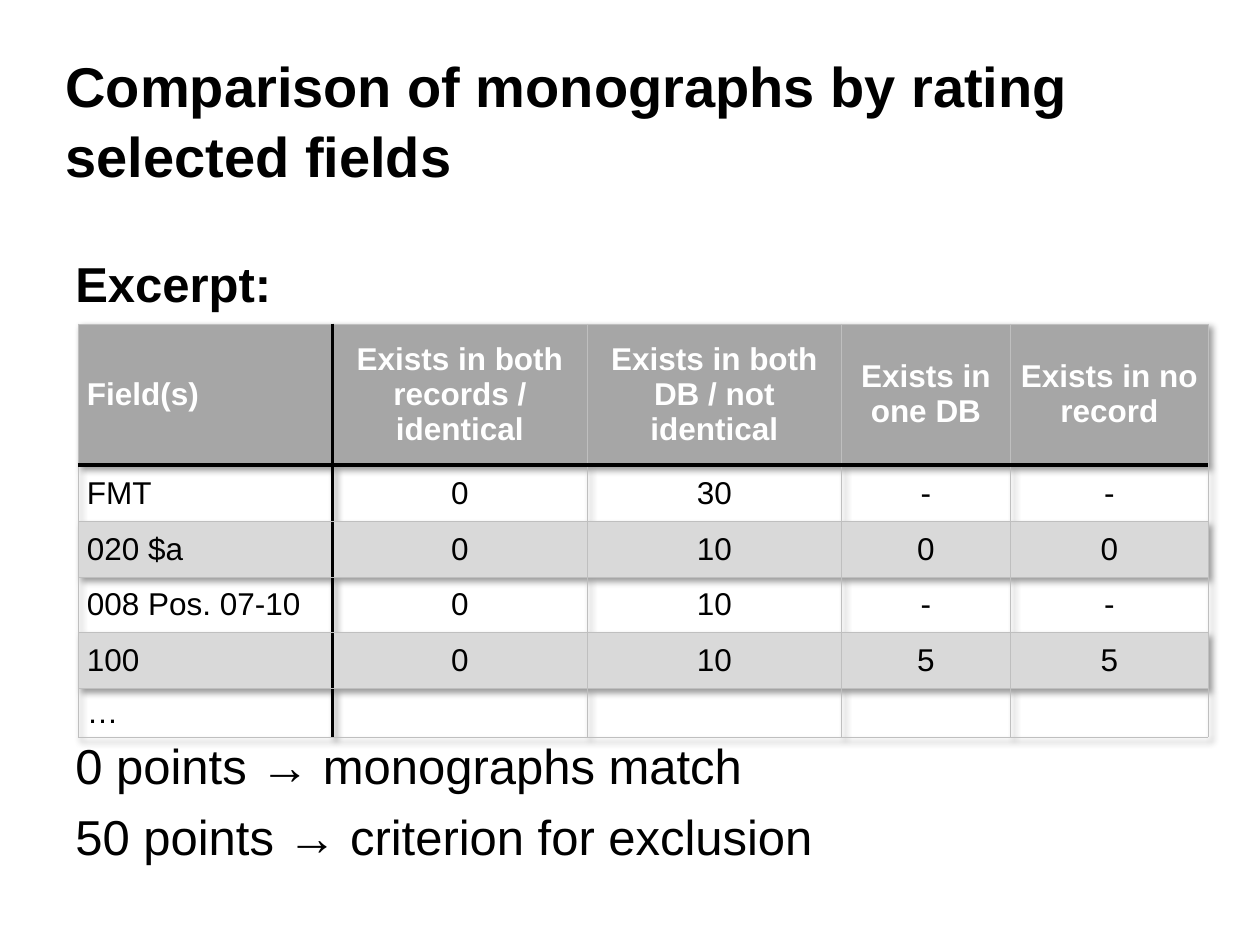
from dataclasses import dataclass

from lxml import etree
from pptx import Presentation, util as u
from pptx.dml.color import RGBColor
from pptx.enum import text
from pptx.oxml import parse_xml
from pptx.oxml.ns import nsdecls, qn

COLORS = {"black": "000000", "white": "FFFFFF", "header": "A6A6A6",
          "band": "D9D9D9", "rule": "BFBFBF"}
WIDTH, HEIGHT = 10, 7.5
COLUMN_WIDTHS = [2.02, 2.02, 2.02, 1.34, 1.57]
ROW_HEIGHTS = [1.12, 0.45, 0.44, 0.44, 0.44, 0.39]
ROWS = [
    ["Field(s)", "Exists in both records / identical",
     "Exists in both DB / not identical", "Exists in one DB",
     "Exists in no record"],
    ["FMT", "0", "30", "-", "-"],
    ["020 $a", "0", "10", "0", "0"],
    ["008 Pos. 07-10", "0", "10", "-", "-"],
    ["100", "0", "10", "5", "5"],
    ["…", "", "", "", ""],
]
THIN, THICK = ("rule", 0.25), ("black", 2.25)
SHADOW = (f'<a:effectLst {nsdecls("a")}><a:outerShdw blurRad="50800" dist="38100" '
          'dir="2700000" algn="tl" rotWithShape="0"><a:prstClr val="black">'
          '<a:alpha val="40000"/></a:prstClr></a:outerShdw></a:effectLst>')
NO_STYLE = "{2D5ABB26-0587-4C30-8999-92F81FD0307C}"


@dataclass
class Block:
    """Text whose place is given as shares of the slide's size."""
    lines: list[str]
    left: float
    top: float
    width: float
    height: float
    size: float
    bold: bool
    line_spacing: float = 1.0
    space_after: float = 0
    anchor: text.MSO_ANCHOR = text.MSO_ANCHOR.TOP


TITLE = Block(["Comparison of monographs by rating selected fields"],
              0.042, 0.047, 0.915, 0.157, 32, True, 1.04,
              anchor=text.MSO_ANCHOR.MIDDLE)
NOTES = [
    Block(["Excerpt:"], 0.05, 0.262, 0.9, 0.07, 28, True),
    Block(["0 points → monographs match", "50 points → criterion for exclusion"],
          0.05, 0.772, 0.9, 0.15, 28, False, space_after=7),
]


def set_all(target, values: dict) -> None:
    for name, value in values.items():
        setattr(target, name, value)


def format_paragraph(paragraph, size: float, bold: bool, color: str, **values) -> None:
    set_all(paragraph, values)
    set_all(paragraph.font, {"name": "Arial", "size": u.Pt(size), "bold": bold})
    paragraph.font.color.rgb = RGBColor.from_string(COLORS[color])


def fill_block(shape, block: Block) -> None:
    set_all(shape, {"left": u.Inches(block.left * WIDTH),
                    "top": u.Inches(block.top * HEIGHT),
                    "width": u.Inches(block.width * WIDTH),
                    "height": u.Inches(block.height * HEIGHT)})
    frame = shape.text_frame
    frame.text = "\n".join(block.lines)
    set_all(frame, {"word_wrap": True, "auto_size": text.MSO_AUTO_SIZE.NONE,
                    "vertical_anchor": block.anchor})
    for paragraph in frame.paragraphs:
        format_paragraph(paragraph, block.size, block.bold, "black",
                         alignment=text.PP_ALIGN.LEFT,
                         line_spacing=block.line_spacing,
                         space_after=u.Pt(block.space_after))


def set_borders(cell, borders: dict[str, tuple[str, float]]) -> None:
    """Insert border lines ahead of the cell's fill, in schema order L, R, T, B."""
    properties = cell._tc.get_or_add_tcPr()
    for index, (side, (color, points)) in enumerate(borders.items()):
        line = etree.Element(qn(f"a:ln{side}"), w=str(u.Pt(points)))
        fill = etree.SubElement(line, qn("a:solidFill"))
        etree.SubElement(fill, qn("a:srgbClr"), val=COLORS[color])
        properties.insert(index, line)


def format_cell(cell, row: int, column: int) -> None:
    is_header = row == 0
    cell.text = ROWS[row][column]
    set_all(cell, {"vertical_anchor": text.MSO_ANCHOR.MIDDLE,
                   "margin_left": u.Inches(0.07), "margin_right": u.Inches(0.07),
                   "margin_top": 0, "margin_bottom": 0})
    alignment = text.PP_ALIGN.CENTER if column else text.PP_ALIGN.LEFT
    format_paragraph(cell.text_frame.paragraphs[0], 18, is_header,
                     "white" if is_header else "black", alignment=alignment,
                     space_before=u.Pt(6), space_after=u.Pt(6))
    if is_header or row in (2, 4):
        cell.fill.solid()
        cell.fill.fore_color.rgb = RGBColor.from_string(
            COLORS["header" if is_header else "band"])
    else:
        cell.fill.background()
    set_borders(cell, {"L": THICK if column == 1 else THIN,
                       "R": THICK if column == 0 else THIN,
                       "T": THICK if row == 1 else THIN,
                       "B": THICK if is_header else THIN})


def add_rating_table(slide) -> None:
    table = slide.shapes.add_table(
        len(ROWS), len(COLUMN_WIDTHS), u.Inches(0.62), u.Inches(2.57),
        u.Inches(sum(COLUMN_WIDTHS)), u.Inches(sum(ROW_HEIGHTS))).table
    table.horz_banding = False
    properties = table._tbl.tblPr
    properties.find(qn("a:tableStyleId")).text = NO_STYLE
    properties.insert(0, parse_xml(SHADOW))
    for column, width in zip(table.columns, COLUMN_WIDTHS):
        column.width = u.Inches(width)
    for row, height in enumerate(ROW_HEIGHTS):
        table.rows[row].height = u.Inches(height)
        for column in range(len(COLUMN_WIDTHS)):
            format_cell(table.cell(row, column), row, column)


def main() -> None:
    presentation = Presentation()
    set_all(presentation, {"slide_width": u.Inches(WIDTH),
                           "slide_height": u.Inches(HEIGHT)})
    slide = presentation.slides.add_slide(presentation.slide_layouts[5])
    fill_block(slide.shapes.title, TITLE)
    for block in NOTES:
        fill_block(slide.shapes.add_textbox(0, 0, 0, 0), block)
    add_rating_table(slide)
    presentation.save("out.pptx")


if __name__ == "__main__":
    main()
